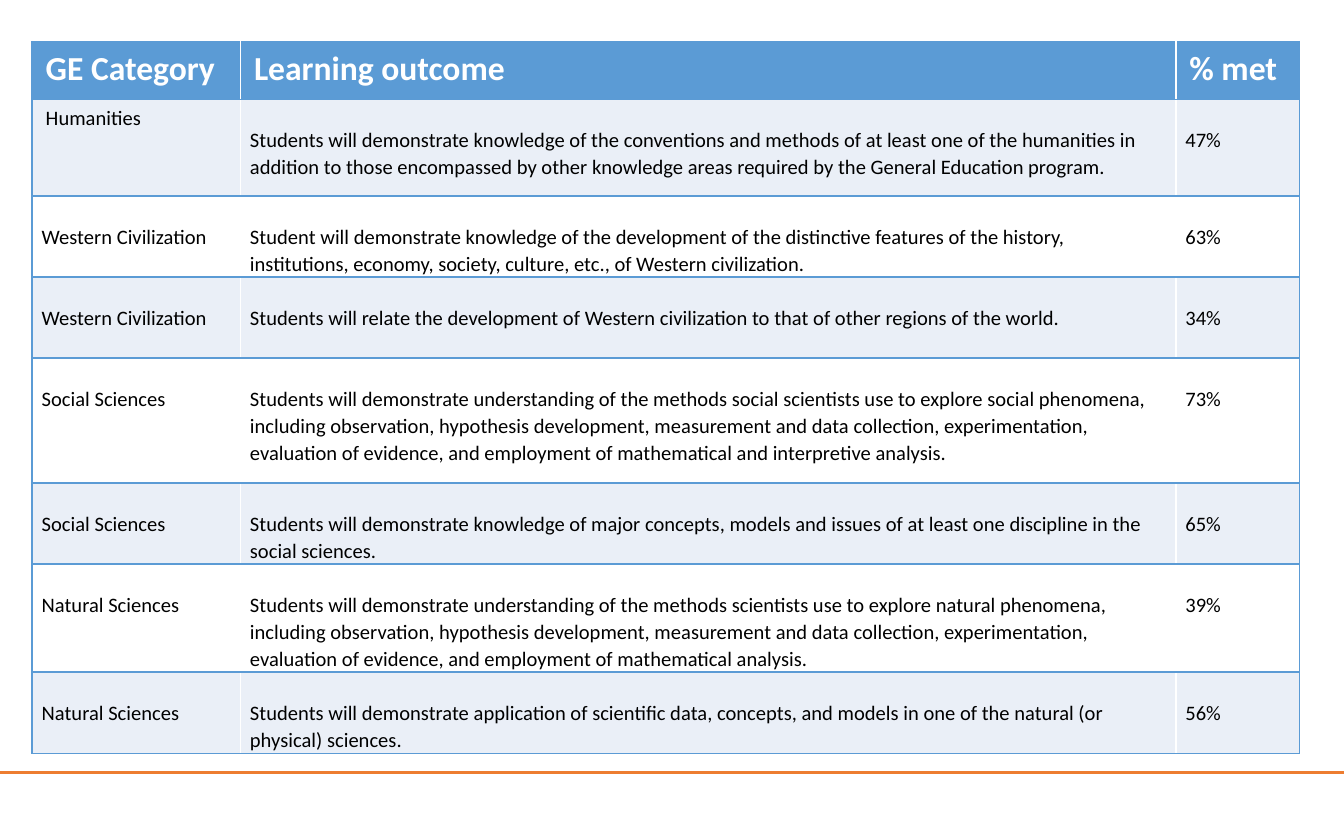
from lxml import etree
from pptx import Presentation
from pptx import util as u
from pptx.dml.color import RGBColor
from pptx.enum import shapes
from pptx.oxml.ns import qn

WIDE, HIGH = 10, 6.25
BLUE, PALE, WHITE, BLACK, ORANGE = "5B9BD5", "EAEFF7", "FFFFFF", "000000", "ED7D31"
COLS = [1.55, 6.96, 0.92]
LINE = 0.2  # height of one line of body text
HEAD = ["GE Category", "Learning outcome", "% met"]
ROWS = [
    (0.72, "Humanities",
     "Students will demonstrate knowledge of the conventions and methods of at least one of the "
     "humanities in addition to those encompassed by other knowledge areas required by the "
     "General Education program.", "47%"),
    (0.6, "Western Civilization",
     "Student will demonstrate knowledge of the development of the distinctive features of the "
     "history, institutions, economy, society, culture, etc., of Western civilization.", "63%"),
    (0.6, "Western Civilization",
     "Students will relate the development of Western civilization to that of other regions of "
     "the world.", "34%"),
    (0.93, "Social Sciences",
     "Students will demonstrate understanding of the methods social scientists use to explore "
     "social phenomena, including observation, hypothesis development, measurement and data "
     "collection, experimentation, evaluation of evidence, and employment of mathematical and "
     "interpretive analysis.", "73%"),
    (0.6, "Social Sciences",
     "Students will demonstrate knowledge of major concepts, models and issues of at least one "
     "discipline in the social sciences.", "65%"),
    (0.8, "Natural Sciences",
     "Students will demonstrate understanding of the methods scientists use to explore natural "
     "phenomena, including observation, hypothesis development, measurement and data "
     "collection, experimentation, evaluation of evidence, and employment of mathematical "
     "analysis.", "39%"),
    (0.6, "Natural Sciences",
     "Students will demonstrate application of scientific data, concepts, and models in one of "
     "the natural (or physical) sciences.", "56%"),
]


def color(code):
    return RGBColor.from_string(code)


def add_rule(slide):
    y = u.Inches(HIGH * 0.92)
    rule = slide.shapes.add_connector(
        shapes.MSO_CONNECTOR.STRAIGHT, u.Inches(-0.02), y, u.Inches(WIDE + 0.03), y)
    rule.line.color.rgb = color(ORANGE)
    rule.line.width = u.Pt(1.5)
    etree.SubElement(rule._element.spPr, qn("a:effectLst"))


def set_edges(cell, sides):
    """Draw 1 pt borders on the given sides, in the order L, R, T, B."""
    props = cell._tc.get_or_add_tcPr()
    for spot, side in enumerate(sides):
        edge = etree.Element(qn(f"a:ln{side}"), w=str(u.Pt(1)))
        fill = etree.SubElement(edge, qn("a:solidFill"))
        etree.SubElement(fill, qn("a:srgbClr"), val=BLUE)
        props.insert(spot, edge)


def set_pads(cell, side, top, base):
    cell.margin_left = cell.margin_right = u.Inches(side)
    cell.margin_top, cell.margin_bottom = u.Inches(top), u.Inches(base)


def set_text(cell, words, size, ink, bold=False):
    run = cell.text_frame.paragraphs[0].add_run()
    run.text = words
    font = run.font
    font.name, font.size, font.bold = "Calibri", u.Pt(size), bold
    font.color.rgb = color(ink)


def fill_cell(cell, row, col, words):
    head = row == 0
    cell.fill.solid()
    cell.fill.fore_color.rgb = color(BLUE if head else PALE if row % 2 else WHITE)
    set_edges(cell, ["LTB", "TB", "RTB"][col])
    set_text(cell, words, 18 if head else 11, WHITE if head else BLACK, head)
    if head or (row, col) == (1, 0):
        set_pads(cell, 0.1, 0.05, 0.05)
    else:
        set_pads(cell, 0.07, LINE, 0)
        cell.text_frame.paragraphs[0].line_spacing = 1.07


def add_grid(slide):
    data = [(0.43, *HEAD)] + ROWS
    tall = sum(row[0] for row in data)
    frame = slide.shapes.add_table(
        len(data), len(COLS), u.Inches(0.24), u.Inches(0.31),
        u.Inches(sum(COLS)), u.Inches(tall))
    grid = frame.table
    for col, wide in zip(grid.columns, COLS):
        col.width = u.Inches(wide)
    for r, (high, *texts) in enumerate(data):
        grid.rows[r].height = u.Inches(high)
        for c, words in enumerate(texts):
            fill_cell(grid.cell(r, c), r, c, words)


def main():
    deck = Presentation()
    deck.slide_width, deck.slide_height = u.Inches(WIDE), u.Inches(HIGH)
    slide = deck.slides.add_slide(deck.slide_layouts[6])
    add_rule(slide)
    add_grid(slide)
    deck.save("out.pptx")


if __name__ == "__main__":
    main()
